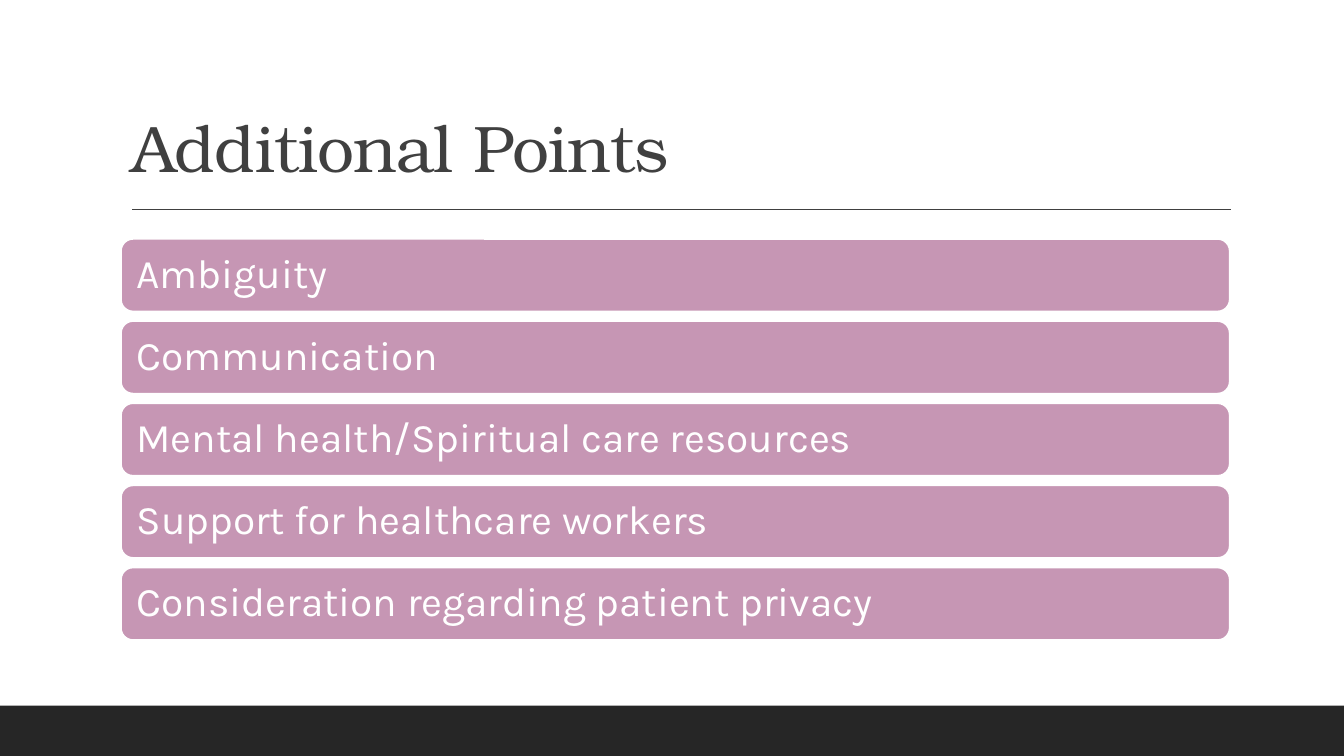
"""Build a slide with a ruled title and a stack of rounded bars."""
from dataclasses import dataclass

from lxml.etree import SubElement
from pptx import Presentation
from pptx.dml.color import RGBColor
from pptx.enum.shapes import MSO_CONNECTOR, MSO_SHAPE
from pptx.enum.text import MSO_ANCHOR, MSO_AUTO_SIZE, PP_ALIGN
from pptx.oxml.ns import qn
from pptx.util import Inches, Pt

WHITE = RGBColor(0xFF, 0xFF, 0xFF)
GREY = RGBColor(0x40, 0x40, 0x40)
DARK = RGBColor(0x26, 0x26, 0x26)
PINK = RGBColor(0xC6, 0x96, 0xB4)

UNIT = Inches(0.1)
WIDE, HIGH = 133.33, 75
PITCH = 8.15
INSET = 1.2 * UNIT

HEAD = {"name": "TeX Gyre Bonum", "size": Pt(47)}
BODY = {"name": "Karla", "size": Pt(29)}
PARA = {"alignment": PP_ALIGN.LEFT, "line_spacing": 0.9}
PADS = {f"margin_{side}": int(INSET) for side in ("left", "top", "right", "bottom")}
LOW = {"vertical_anchor": MSO_ANCHOR.BOTTOM, "word_wrap": True,
       "auto_size": MSO_AUTO_SIZE.NONE}
MID = {"vertical_anchor": MSO_ANCHOR.MIDDLE, "word_wrap": True, **PADS}

ITEMS = (
    "Ambiguity",
    "Communication",
    "Mental health/Spiritual care resources",
    "Support for healthcare workers",
    "Consideration regarding patient privacy",
)


@dataclass(frozen=True)
class Box:
    """A place on the grid, in columns and rows."""
    col: float
    row: float
    cols: float
    rows: float

    def spans(self) -> tuple[int, ...]:
        """Return left, top, width and height as lengths."""
        return tuple(round(n * UNIT) for n in (self.col, self.row, self.cols, self.rows))


@dataclass(frozen=True)
class Bar:
    """A rounded bar with its label."""
    text: str
    box: Box


def apply(target, values: dict) -> None:
    """Set each format value on the target."""
    for name, value in values.items():
        setattr(target, name, value)


def write(shape, text: str, frame: dict, font: dict, ink: RGBColor) -> None:
    """Put one formatted paragraph in a shape."""
    apply(shape.text_frame, frame)
    para = shape.text_frame.paragraphs[0]
    apply(para, PARA)
    run = para.add_run()
    run.text = text
    apply(run.font, font)
    run.font.color.rgb = ink


def draw_shape(slide, kind: MSO_SHAPE, box: Box, fill: RGBColor):
    """Draw a flat filled shape."""
    shape = slide.shapes.add_shape(kind, *box.spans())
    shape.shadow.inherit = False
    shape.fill.solid()
    shape.fill.fore_color.rgb = fill
    shape.line.fill.background()
    return shape


def draw_rule(slide, box: Box) -> None:
    """Draw the line under the title."""
    left, top, width, drop = box.spans()
    rule = slide.shapes.add_connector(
        MSO_CONNECTOR.STRAIGHT, left, top, left + width, top + drop)
    rule.line.color.rgb = GREY
    rule.line.width = Pt(1)
    SubElement(rule.element.spPr, qn("a:effectLst"))


def draw_title(slide, text: str, box: Box) -> None:
    """Place and fill the title."""
    title = slide.shapes.title
    apply(title, dict(zip(("left", "top", "width", "height"), box.spans())))
    write(title, text, LOW, HEAD, GREY)
    title.text_frame.paragraphs[0].runs[0].font._element.set("spc", "-50")


def draw_bar(slide, bar: Bar) -> None:
    """Draw one bar of the list."""
    shape = draw_shape(slide, MSO_SHAPE.ROUNDED_RECTANGLE, bar.box, PINK)
    shape.line.color.rgb = WHITE
    shape.line.width = Pt(1.25)
    write(shape, bar.text, MID, BODY, WHITE)


def main() -> None:
    """Build and save the deck."""
    deck = Presentation()
    deck.slide_width, deck.slide_height = Box(0, 0, WIDE, HIGH).spans()[2:]
    slide = deck.slides.add_slide(deck.slide_layouts[5])
    draw_shape(slide, MSO_SHAPE.RECTANGLE, Box(0, 70, WIDE, 5), DARK)
    draw_rule(slide, Box(13.1, 20.8, 109, 0))
    draw_title(slide, "Additional Points", Box(12, 3.1, 110, 15.9))
    for step, text in enumerate(ITEMS):
        draw_bar(slide, Bar(text, Box(12, 23.7 + step * PITCH, 110, 7.2)))
    deck.save("out.pptx")


if __name__ == "__main__":
    main()
